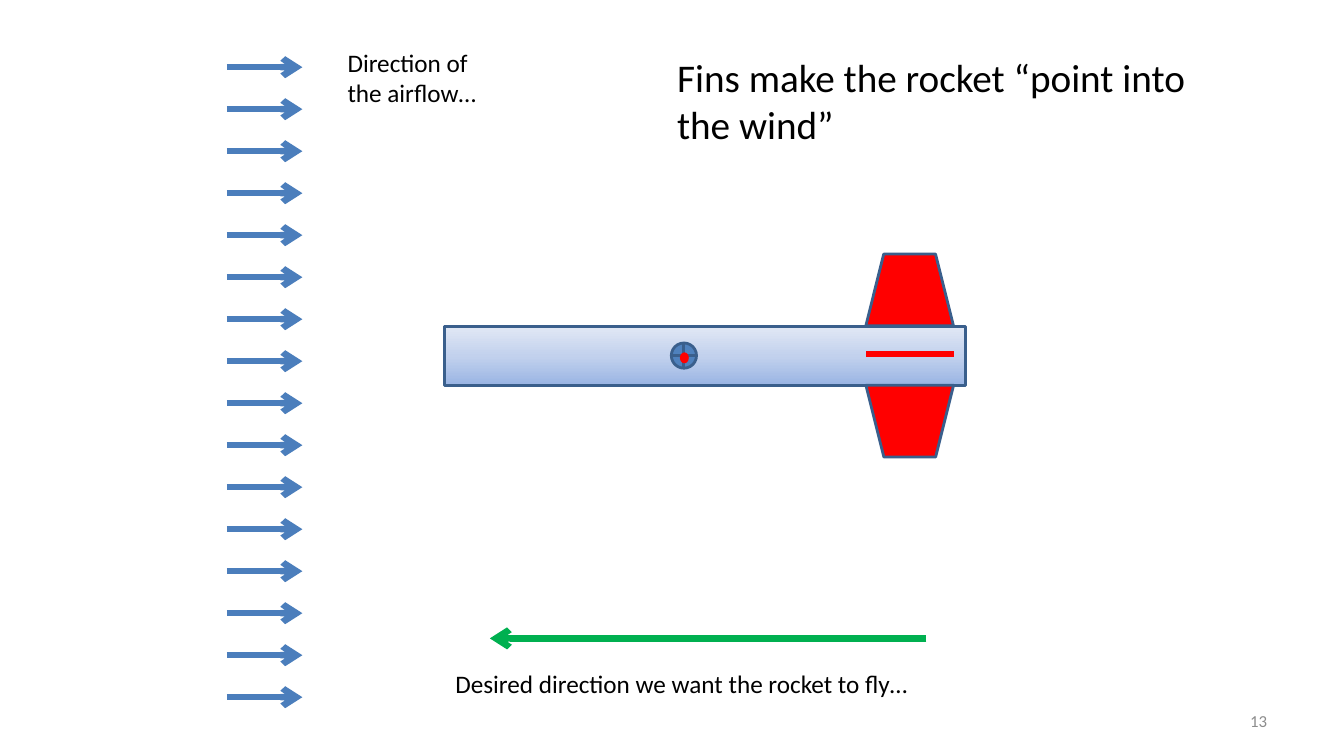
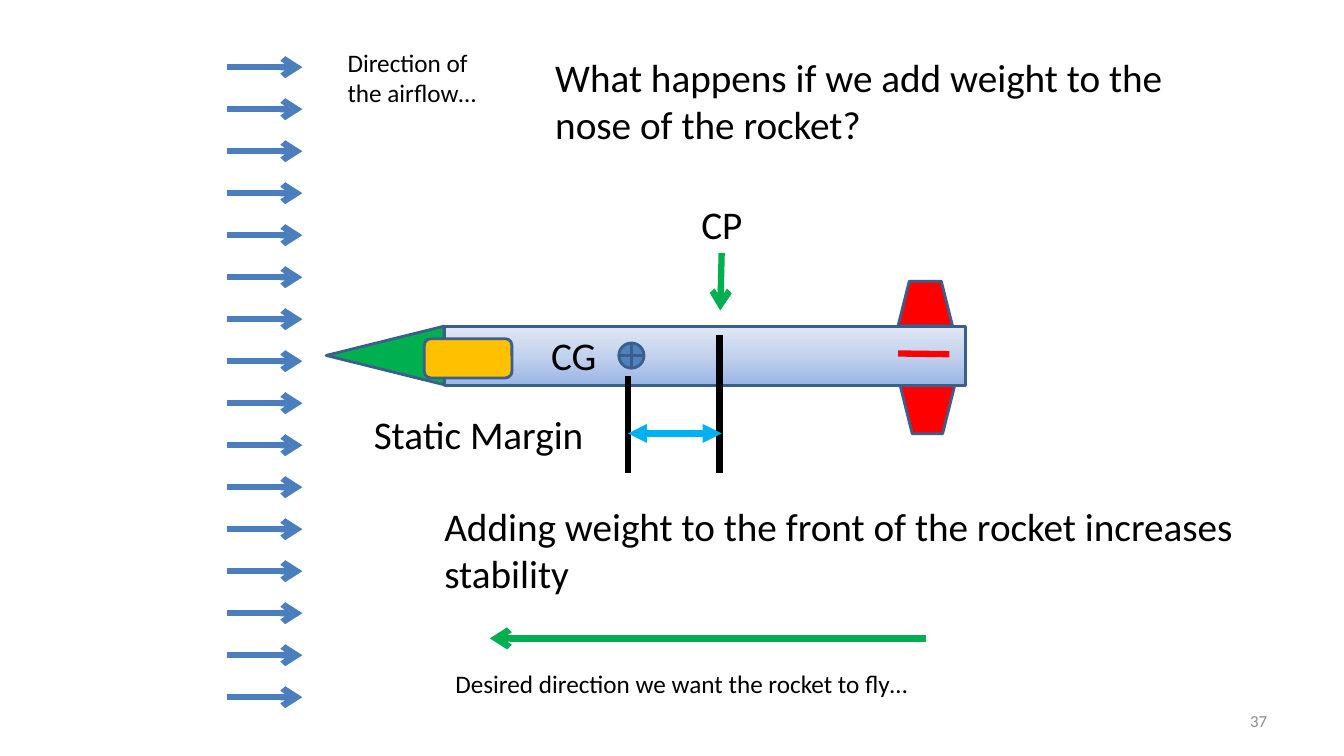
from copy import deepcopy
from dataclasses import dataclass

from lxml.etree import SubElement
from pptx import Presentation
from pptx.dml.color import RGBColor
from pptx.enum.shapes import MSO_CONNECTOR, MSO_SHAPE
from pptx.enum.text import MSO_ANCHOR, MSO_AUTO_SIZE, PP_ALIGN
from pptx.oxml.ns import qn
from pptx.shapes.autoshape import Shape
from pptx.slide import Slide
from pptx.util import Pt

OUTLINE = "3A5F8C"
AIRFLOW = "4B7EBC"
STEEL = "4F81BD"
RED = "FF0000"
GREEN = "00B050"
AMBER = "FFC000"
SKY = "00B0F0"
BLACK = "000000"
GREY = "8C8C8C"
BODY_GRADIENT = ((0, "9AB5E4"), (0.5, "C2D1ED"), (1, "E1E8F5"))
FONT = "Calibri"
HEADING_SIZE = 28
CAPTION_SIZE = 18
NUMBER_SIZE = 12
ARROW_COUNT = 16
ARROW_TOP = 48
ARROW_STEP = 30


@dataclass(frozen=True)
class Part:
    geometry: MSO_SHAPE
    left: float
    top: float
    width: float
    height: float
    fill: str
    outline: str = OUTLINE
    rotation: float = 0


@dataclass(frozen=True)
class Stroke:
    start: tuple[float, float]
    end: tuple[float, float]
    color: str
    head: str = ""
    tail: str = ""


@dataclass(frozen=True)
class Label:
    text: str
    left: float
    top: float
    width: float
    height: float
    size: float = HEADING_SIZE
    color: str = BLACK
    align: PP_ALIGN = PP_ALIGN.LEFT
    anchor: MSO_ANCHOR = MSO_ANCHOR.TOP
    auto_size: MSO_AUTO_SIZE = MSO_AUTO_SIZE.SHAPE_TO_FIT_TEXT


@dataclass(frozen=True)
class RocketSlide:
    number: int
    gravity_left: float
    fins: tuple[Part, Part]
    fin_edge: Stroke
    details: tuple[Part | Stroke | Label, ...]


BODY = Part(MSO_SHAPE.RECTANGLE, 317.5, 233.3, 372.2, 41.8, STEEL)

CAPTIONS = (
    Label("Desired direction we want the rocket to fly…",
          318.2, 473.8, 419.8, 29, CAPTION_SIZE),
    Label("Direction of the airflow…", 241.2, 30.2, 125.3, 51, CAPTION_SIZE),
)

SLIDES = (
    RocketSlide(
        number=13,
        gravity_left=479.5,
        fins=(
            Part(MSO_SHAPE.TRAPEZOID, 618.5, 181.5, 62.6, 51.2, RED),
            Part(MSO_SHAPE.TRAPEZOID, 618.5, 275.2, 62.6, 51.2, RED, rotation=180),
        ),
        fin_edge=Stroke((681.1, 252.7), (618.5, 252.7), RED),
        details=(
            Part(MSO_SHAPE.OVAL, 486.7, 252.7, 4.3, 5.8, RED, RED),
            Label("Fins make the rocket “point into the wind”", 476.6, 34.6, 391.7, 75),
        ),
    ),
    RocketSlide(
        number=37,
        gravity_left=442,
        fins=(
            Part(MSO_SHAPE.TRAPEZOID, 641.5, 200.9, 38.9, 31.9, RED),
            Part(MSO_SHAPE.TRAPEZOID, 643, 275.5, 38.9, 34.3, RED, rotation=180),
        ),
        fin_edge=Stroke((678.2, 253), (641.5, 252.5), RED),
        details=(
            Part(MSO_SHAPE.ISOSCELES_TRIANGLE, 254.2, 211.8, 41.8, 84.2, GREEN,
                 rotation=270),
            Label("CP", 493.9, 139.7, 56.9, 41),
            Stroke((515.5, 180.7), (514.5, 221.8), GREEN, tail="arrow"),
            Label("Adding weight to the front of the rocket increases stability",
                  310.3, 355, 589, 75),
            Label("CG", 386.6, 233.3, 56.9, 41),
            Part(MSO_SHAPE.ROUNDED_RECTANGLE, 303.1, 241.9, 62.6, 28.1, AMBER),
            Stroke((448.6, 268.6), (448.6, 337.7), BLACK),
            Stroke((514, 239), (514, 337.7), BLACK),
            Stroke((448.6, 309.6), (515.5, 309.6), SKY, "triangle", "triangle"),
            Label("Static Margin", 259.9, 289.4, 182.9, 41),
            Label("What happens if we add weight to the nose of the rocket?",
                  389.5, 34.6, 493.2, 75),
        ),
    ),
)


def rgb(value: str) -> RGBColor:
    return RGBColor.from_string(value)


def apply_format(target: object, values: dict[str, object]) -> None:
    for name, value in values.items():
        setattr(target, name, value)


def draw_part(slide: Slide, part: Part) -> Shape:
    shape = slide.shapes.add_shape(
        part.geometry, Pt(part.left), Pt(part.top), Pt(part.width), Pt(part.height))
    shape.shadow.inherit = False
    shape.rotation = part.rotation
    shape.fill.solid()
    shape.fill.fore_color.rgb = rgb(part.fill)
    shape.line.color.rgb = rgb(part.outline)
    shape.line.width = Pt(2)
    return shape


def draw_body(slide: Slide) -> None:
    fill = draw_part(slide, BODY).fill
    fill.gradient()
    fill.gradient_angle = 90
    shape = slide.shapes[-1]
    stop_list = shape.element.spPr.find(f".//{qn('a:gsLst')}")
    stop_list.insert(1, deepcopy(stop_list[0]))
    for stop, (position, color) in zip(fill.gradient_stops, BODY_GRADIENT):
        stop.position = position
        stop.color.rgb = rgb(color)


def draw_stroke(slide: Slide, stroke: Stroke) -> None:
    connector = slide.shapes.add_connector(
        MSO_CONNECTOR.STRAIGHT, *(Pt(value) for value in stroke.start + stroke.end))
    connector.line.color.rgb = rgb(stroke.color)
    connector.line.width = Pt(4.5)
    properties = connector.element.spPr
    outline = properties.find(qn("a:ln"))
    for tag, kind in (("a:headEnd", stroke.head), ("a:tailEnd", stroke.tail)):
        if kind:
            SubElement(outline, qn(tag), type=kind)
    SubElement(properties, qn("a:effectLst"))


def draw_label(slide: Slide, label: Label) -> None:
    text_box = slide.shapes.add_textbox(
        Pt(label.left), Pt(label.top), Pt(label.width), Pt(label.height))
    frame = text_box.text_frame
    apply_format(frame, {
        "word_wrap": True,
        "auto_size": label.auto_size,
        "vertical_anchor": label.anchor,
    })
    paragraph = frame.paragraphs[0]
    paragraph.alignment = label.align
    run = paragraph.add_run()
    run.text = label.text
    apply_format(run.font, {"name": FONT, "size": Pt(label.size)})
    run.font.color.rgb = rgb(label.color)


def draw_directions(slide: Slide) -> None:
    for index in range(ARROW_COUNT):
        height = ARROW_TOP + index * ARROW_STEP
        draw_stroke(slide, Stroke((162, height), (216, height), AIRFLOW, tail="arrow"))
    draw_stroke(slide, Stroke((661.7, 456), (349.9, 456), GREEN, tail="arrow"))
    for caption in CAPTIONS:
        draw_label(slide, caption)


def draw_number(slide: Slide, number: int) -> None:
    draw_label(slide, Label(
        str(number), 688.3, 500.4, 223.9, 28.8, NUMBER_SIZE, GREY,
        PP_ALIGN.RIGHT, MSO_ANCHOR.MIDDLE, MSO_AUTO_SIZE.NONE))


def draw_rocket(slide: Slide, content: RocketSlide) -> None:
    draw_body(slide)
    draw_part(slide, Part(
        MSO_SHAPE.FLOWCHART_OR, content.gravity_left, 245, 18, 18, STEEL))
    for fin in content.fins:
        draw_part(slide, fin)
    draw_stroke(slide, content.fin_edge)


def draw_slide(slide: Slide, content: RocketSlide) -> None:
    draw_rocket(slide, content)
    draw_directions(slide)
    painters = {Part: draw_part, Stroke: draw_stroke, Label: draw_label}
    for detail in content.details:
        painters[type(detail)](slide, detail)
    draw_number(slide, content.number)


def main() -> None:
    presentation = Presentation()
    apply_format(presentation, {"slide_width": Pt(960), "slide_height": Pt(540)})
    blank_layout = presentation.slide_layouts[6]
    for content in SLIDES:
        draw_slide(presentation.slides.add_slide(blank_layout), content)
    presentation.save("out.pptx")


if __name__ == "__main__":
    main()
